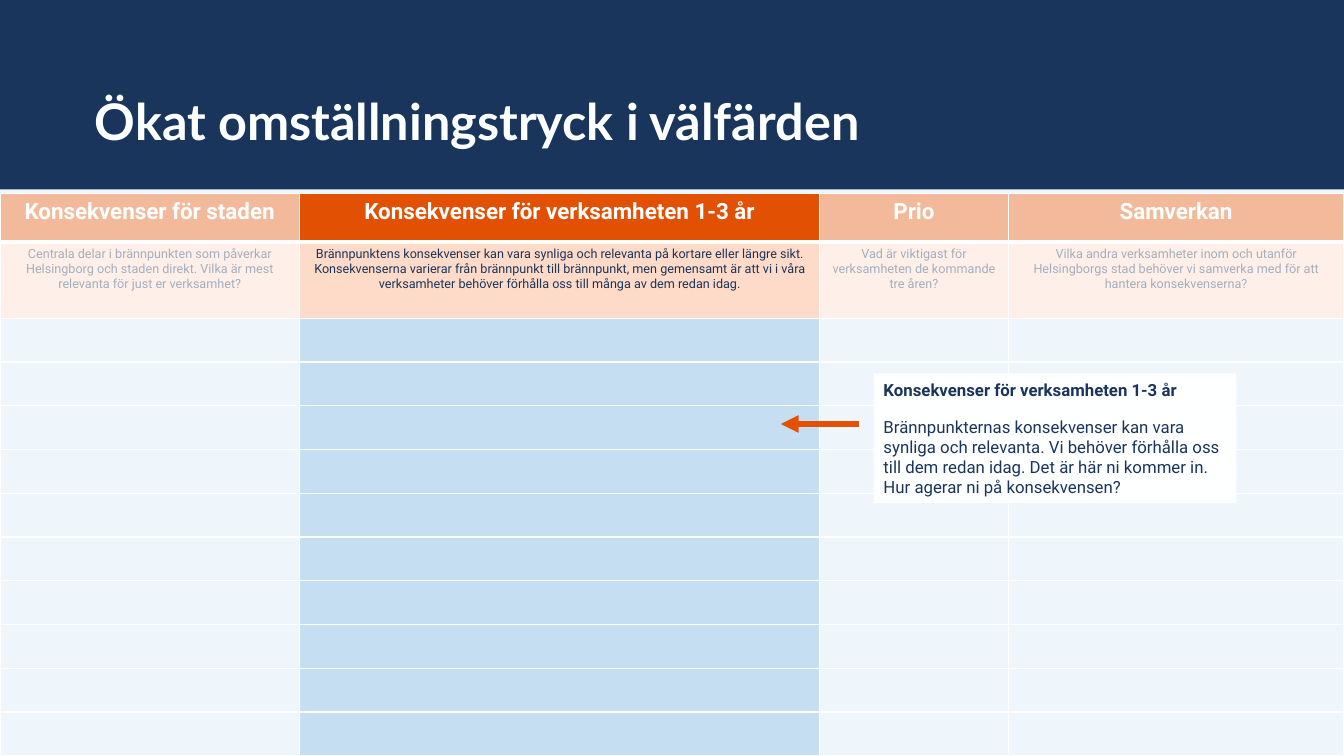
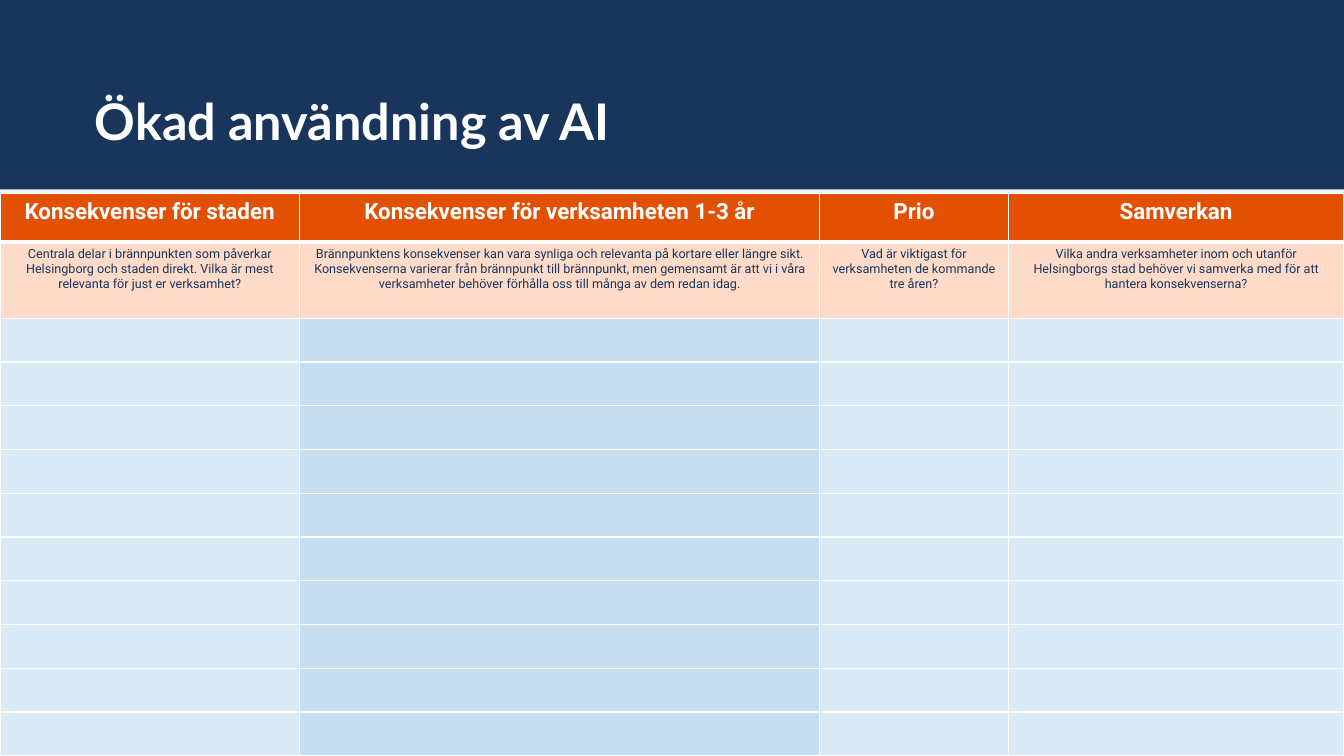
from lxml import etree
from pptx import Presentation
from pptx import util as u
from pptx.dml.color import RGBColor
from pptx.enum import shapes, text
from pptx.oxml.ns import qn

HUES = {"navy": "1A355C", "white": "FEFFFF", "pale": "EEF5FB",
        "fire": "E25103", "peach": "FEDBC8", "sky": "C6DEF2"}
WIDE, HIGH = u.Inches(13.33), u.Inches(7.5)
BAND = (0, 0, 100, 25.07)
TITLE = (7.05, 3.2, 75, 16.8)
GRID = (0, 25.6, 100, 74.4)
COLS = (22.28, 38.71, 14.03, 24.98)
ROWS = (8.6, 13.6) + (7.78,) * 10
FOCUS = 1
HEADS = [
    ("Konsekvenser för staden",
     "Centrala delar i brännpunkten som påverkar Helsingborg och staden direkt. "
     "Vilka är mest relevanta för just er verksamhet?"),
    ("Konsekvenser för verksamheten 1-3 år",
     "Brännpunktens konsekvenser kan vara synliga och relevanta på kortare eller "
     "längre sikt. Konsekvenserna varierar från brännpunkt till brännpunkt, men "
     "gemensamt är att vi i våra verksamheter behöver förhålla oss till många av "
     "dem redan idag."),
    ("Prio", "Vad är viktigast för verksamheten de kommande tre åren?"),
    ("Samverkan",
     "Vilka andra verksamheter inom och utanför Helsingborgs stad behöver vi "
     "samverka med för att hantera konsekvenserna?"),
]
NOTE = ("Brännpunkternas konsekvenser kan vara synliga och relevanta. Vi behöver "
        "förhålla oss till dem redan idag. Det är här ni kommer in. Hur agerar ni "
        "på konsekvensen?")


def scale(box):
    """Turn a box in percent of the slide into lengths."""
    return [u.Emu(int(part * side / 100))
            for part, side in zip(box, (WIDE, HIGH, WIDE, HIGH))]


def hue(name):
    """Look up a colour by name."""
    return RGBColor.from_string(HUES[name])


def paint(fill, name, alpha=100):
    """Fill with a colour, see-through when alpha is under 100."""
    fill.solid()
    fill.fore_color.rgb = hue(name)
    return alpha


def fade(elem, alpha):
    """Set the opacity of the solid fill that is a child of elem."""
    tint = elem.find(qn("a:solidFill")).find(qn("a:srgbClr"))
    etree.SubElement(tint, qn("a:alpha"), val=str(alpha * 1000))


def write(par, words, size, name, bold=False, font="Roboto",
          align=text.PP_ALIGN.LEFT):
    """Add one formatted run to a paragraph."""
    par.alignment = align
    run = par.add_run()
    run.text = words
    run.font.name, run.font.size, run.font.bold = font, u.Pt(size), bold
    run.font.color.rgb = hue(name)


def block(slide, box, name, alpha=100):
    """Draw a plain rectangle."""
    rect = slide.shapes.add_shape(shapes.MSO_SHAPE.RECTANGLE, *scale(box))
    rect.shadow.inherit = False
    rect.line.fill.background()
    paint(rect.fill, name)
    if alpha < 100:
        fade(rect.element.spPr, alpha)
    return rect


def dress(deck):
    """Give the title layout its background, band and title place."""
    layout = deck.slide_layouts[5]
    paint(layout.background.fill, "pale")
    spot = layout.placeholders[0]
    spot.left, spot.top, spot.width, spot.height = scale(TITLE)
    return layout


def head(slide, words):
    """Fill and format the title placeholder."""
    frame = slide.shapes.title.text_frame
    frame.auto_size = text.MSO_AUTO_SIZE.NONE
    frame.vertical_anchor = text.MSO_ANCHOR.BOTTOM
    frame.margin_left = frame.margin_right = 0
    frame.margin_top = frame.margin_bottom = 0
    par = frame.paragraphs[0]
    par.line_spacing = 0.9
    write(par, words, 36, "white", True, "Lato")


def edge(cell, base):
    """Rule a cell in white, with its own bottom width."""
    props = cell._tc.get_or_add_tcPr()
    for side, width in zip("LRTB", (1, 1, 1, base)):
        line = etree.SubElement(props, qn(f"a:ln{side}"), w=str(u.Pt(width)))
        tint = etree.SubElement(line, qn("a:solidFill"))
        etree.SubElement(tint, qn("a:srgbClr"), val=HUES["white"])


def grid(slide, box):
    """Draw the table of consequences inside a box."""
    left, top, wide, high = scale(box)
    table = slide.shapes.add_table(len(ROWS), len(COLS), left, top, wide, high).table
    table.first_row = table.horz_banding = False
    for col, part in zip(table.columns, COLS):
        col.width = int(wide * part / 100)
    for row, part in zip(table.rows, ROWS):
        row.height = int(high * part / 100)
    looks = [("fire", 16, "white", True), ("peach", 9, "navy", False)]
    for r, row in enumerate(table.rows):
        for c, cell in enumerate(row.cells):
            edge(cell, 3 if r == 0 else 1)
            if r < len(looks):
                back, size, ink, bold = looks[r]
                paint(cell.fill, back)
                write(cell.text_frame.paragraphs[0], HEADS[c][r], size, ink, bold,
                      align=text.PP_ALIGN.CENTER)
            else:
                paint(cell.fill, "sky")
                if c != FOCUS:
                    fade(cell._tc.tcPr, 50)


def note(slide, box):
    """Draw the callout with its arrow to the left."""
    frame = block(slide, box, "white").text_frame
    frame.word_wrap = True
    write(frame.paragraphs[0], HEADS[FOCUS][0], 12, "navy", True)
    par = frame.add_paragraph()
    par.space_before = u.Pt(12)
    write(par, NOTE, 12, "navy")
    left, top, wide, high = box
    tail, mid, tip, _ = scale((left - 1.05, top + high * 0.39, left - 6.9, 0))
    arrow = slide.shapes.add_connector(shapes.MSO_CONNECTOR.STRAIGHT,
                                       tail, mid, tip, mid)
    arrow.line.color.rgb, arrow.line.width = hue("fire"), u.Pt(4.25)
    etree.SubElement(arrow.line._get_or_add_ln(), qn("a:tailEnd"), type="triangle")
    etree.SubElement(arrow._element.spPr, qn("a:effectLst"))


def veil(slide, box):
    """Dim every column except the one in focus and explain that one."""
    left, top, wide, high = box
    start = left + wide * sum(COLS[:FOCUS + 1]) / 100
    block(slide, (start, top, left + wide - start, high), "white", 60)
    note(slide, (left + wide * 0.65, top + high * 0.32, wide * 0.27, high * 0.23))
    block(slide, (left, top, wide * sum(COLS[:FOCUS]) / 100, high), "white", 60)


def main():
    """Build and save the deck."""
    deck = Presentation()
    deck.slide_width, deck.slide_height = WIDE, HIGH
    layout = dress(deck)
    pages = [("Ökat omställningstryck i välfärden", True),
             ("Ökad användning av AI", False)]
    for nth, (words, dim) in enumerate(pages):
        slide = deck.slides.add_slide(layout)
        if nth == 0:
            layout.shapes.element.insert(2, block(slide, BAND, "navy").element)
        head(slide, words)
        grid(slide, GRID)
        if dim:
            veil(slide, GRID)
    deck.save("out.pptx")


if __name__ == "__main__":
    main()
